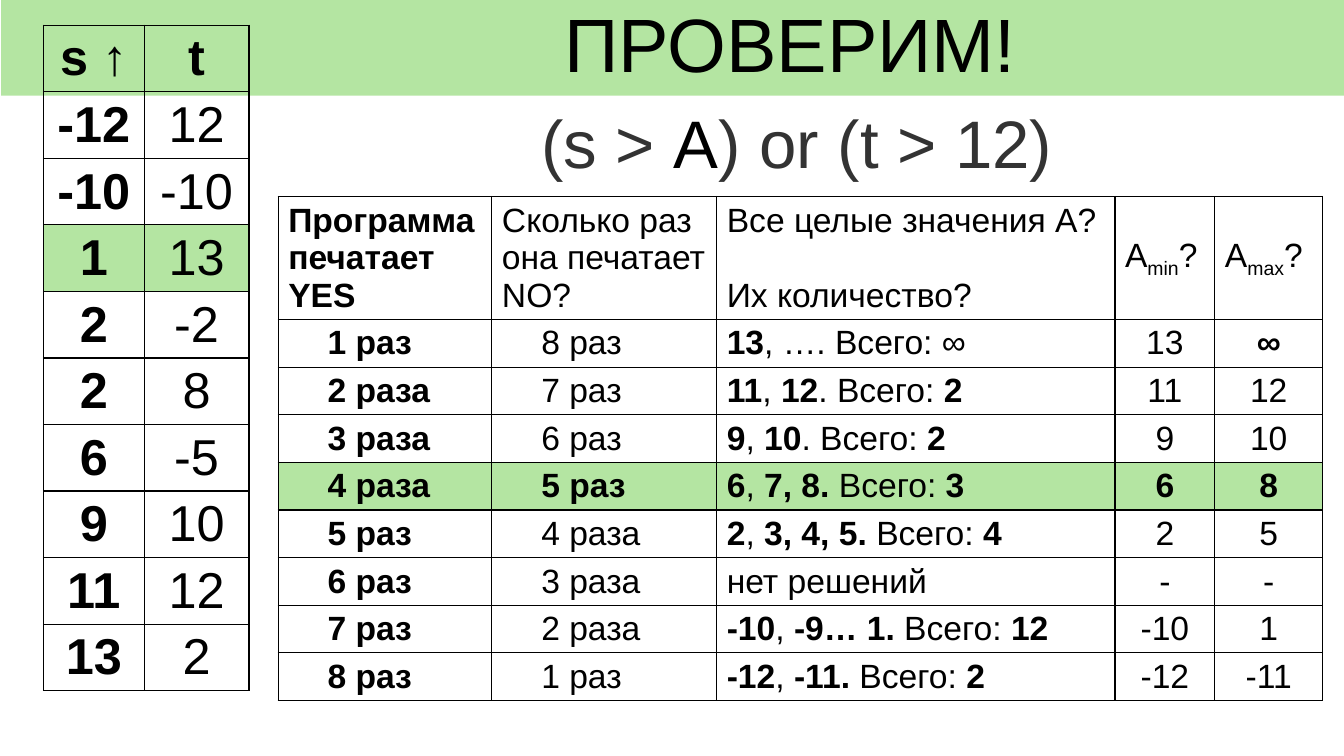
from lxml.etree import SubElement
from pptx import Presentation
from pptx.dml.color import RGBColor
from pptx.enum.shapes import MSO_SHAPE
from pptx.enum.text import MSO_ANCHOR, MSO_AUTO_SIZE, PP_ALIGN
from pptx.oxml.ns import qn
from pptx.util import Inches, Pt

COLORS = {"ink": "000000", "formula": "333333", "green": "B4E5A2"}
BOLD = {"bold": True}
SUBSCRIPT = {"baseline": -25000}
CENTER = {"align": PP_ALIGN.CENTER}
INDENTED = {"indent": 0.39}


def write_run(paragraph, text, size, color="ink", bold=False, baseline=None):
    run = paragraph.add_run()
    run.text = text
    run.font.name = "Arial"
    run.font.size = Pt(size)
    run.font.bold = bold
    run.font.color.rgb = RGBColor.from_string(COLORS[color])
    if baseline:
        run._r.get_or_add_rPr().set("baseline", str(baseline))


def write_text(frame, text, size, accent=BOLD, align=PP_ALIGN.LEFT, indent=0,
               line_spacing=None, before=0, after=0, color="ink"):
    for index, line in enumerate(text.split("\n")):
        paragraph = frame.add_paragraph() if index else frame.paragraphs[0]
        paragraph.alignment = align
        paragraph.line_spacing = line_spacing
        paragraph.space_before = Pt(before if index else 0)
        paragraph.space_after = Pt(after)
        properties = paragraph._p.get_or_add_pPr()
        properties.set("marL", str(Inches(indent)))
        properties.set("indent", "0")
        for position, part in enumerate(line.split("*")):
            if part:
                style = {"color": color, **(accent if position % 2 else {})}
                write_run(paragraph, part, size, **style)


class SlideBuilder:
    """Draws styled elements on one slide, with lengths in percent of its size."""

    def __init__(self, presentation):
        self.width = presentation.slide_width
        self.height = presentation.slide_height
        self.slide = presentation.slides.add_slide(presentation.slide_layouts[6])

    def across(self, percent):
        return round(self.width * percent / 100)

    def down(self, percent):
        return round(self.height * percent / 100)

    def box(self, left, top, width, height):
        return self.across(left), self.down(top), self.across(width), self.down(height)

    def banner(self, bounds, text, size, **style):
        shape = self.slide.shapes.add_shape(MSO_SHAPE.RECTANGLE, *self.box(*bounds))
        shape.shadow.inherit = False
        shape.fill.solid()
        shape.fill.fore_color.rgb = RGBColor.from_string(COLORS["green"])
        shape.line.fill.background()
        shape.text_frame.word_wrap = True
        shape.text_frame.vertical_anchor = MSO_ANCHOR.MIDDLE
        write_text(shape.text_frame, text, size, **style)

    def text(self, bounds, text, size, **style):
        frame = self.slide.shapes.add_textbox(*self.box(*bounds)).text_frame
        frame.word_wrap = True
        frame.auto_size = MSO_AUTO_SIZE.SHAPE_TO_FIT_TEXT
        frame.vertical_anchor = MSO_ANCHOR.MIDDLE
        write_text(frame, text, size, **style)

    def border(self, cell):
        properties = cell._tc.get_or_add_tcPr()
        for side in ("lnL", "lnR", "lnT", "lnB"):
            line = SubElement(properties, qn(f"a:{side}"), w=str(Pt(1)))
            fill = SubElement(line, qn("a:solidFill"))
            SubElement(fill, qn("a:srgbClr"), val=COLORS["ink"])

    def table(self, left, top, columns, heights, rows, size, column_styles,
              highlight, header_styles=None, body_anchor=MSO_ANCHOR.MIDDLE):
        bounds = self.box(left, top, sum(columns), sum(heights))
        table = self.slide.shapes.add_table(len(rows), len(columns), *bounds).table
        table.first_row = table.horz_banding = False
        for column, width in zip(table.columns, columns):
            column.width = self.across(width)
        for index, (values, height) in enumerate(zip(rows, heights)):
            table.rows[index].height = self.down(height)
            header = index == 0
            styles = header_styles if header and header_styles else column_styles
            for number, (value, style) in enumerate(zip(values, styles)):
                cell = table.cell(index, number)
                cell.vertical_anchor = MSO_ANCHOR.MIDDLE if header else body_anchor
                self.border(cell)
                if index == highlight:
                    cell.fill.solid()
                    cell.fill.fore_color.rgb = RGBColor.from_string(COLORS["green"])
                else:
                    cell.fill.background()
                write_text(cell.text_frame, value, size, **style)


PAIRS = [
    ("*s ↑*", "*t*"), ("*-12*", "12"), ("*-10*", "-10"), ("*1*", "13"),
    ("*2*", "-2"), ("*2*", "8"), ("*6*", "-5"), ("*9*", "10"),
    ("*11*", "12"), ("*13*", "2"),
]
ANSWERS = [
    ("*Программа печатает\n*YES*", "Сколько раз она печатает NO?",
     "Все целые значения А?\nИх количество?", "А*min*?", "А*max*?"),
    ("*1 раз*", "8 раз", "*13*, …. Всего: ∞", "13", "*∞*"),
    ("*2 раза*", "7 раз", "*11*, *12*. Всего: *2*", "11", "12"),
    ("*3 раза*", "6 раз", "*9*, *10*. Всего: *2*", "9", "10"),
    ("*4 раза*", "*5 раз*", "*6*, *7, 8. *Всего: *3*", "*6*", "*8*"),
    ("*5 раз*", "4 раза", "*2*, *3, 4, 5.* Всего: *4*", "2", "5"),
    ("*6 раз*", "3 раза", "нет решений", "-", "-"),
    ("*7 раз*", "2 раза", "*-10*, *-9… 1.* Всего: *12*", "-10", "1"),
    ("*8 раз*", "1 раз", "*-12*, *-11.* Всего: *2*", "-12", "-11"),
]


def main():
    presentation = Presentation()
    presentation.slide_width = Inches(13.33)
    presentation.slide_height = Inches(7.5)
    builder = SlideBuilder(presentation)
    builder.banner((0.08, 0, 100, 12.67), "ПРОВЕРИМ!", 54, indent=5.49, line_spacing=0.9)
    builder.table(3.23, 3.33, [7.5, 7.8], [8.8] * len(PAIRS), PAIRS, 36,
                  [CENTER, CENTER], highlight=3)
    builder.table(20.7, 26, [15.9, 16.73, 29.63, 7.43, 8.03],
                  [16.27] + [6.3] * (len(ANSWERS) - 1), ANSWERS, 24,
                  [INDENTED, INDENTED, {}, CENTER, CENTER], highlight=4,
                  header_styles=[{}, {}, {"before": 27}] + [{"accent": SUBSCRIPT}] * 2,
                  body_anchor=MSO_ANCHOR.TOP)
    builder.text((34.2, 12.67, 50.2, 12.13), "(s > *A*) or (t > 12)", 48,
                 accent={"color": "ink"}, color="formula", after=12, **CENTER)
    presentation.save("out.pptx")


if __name__ == "__main__":
    main()
